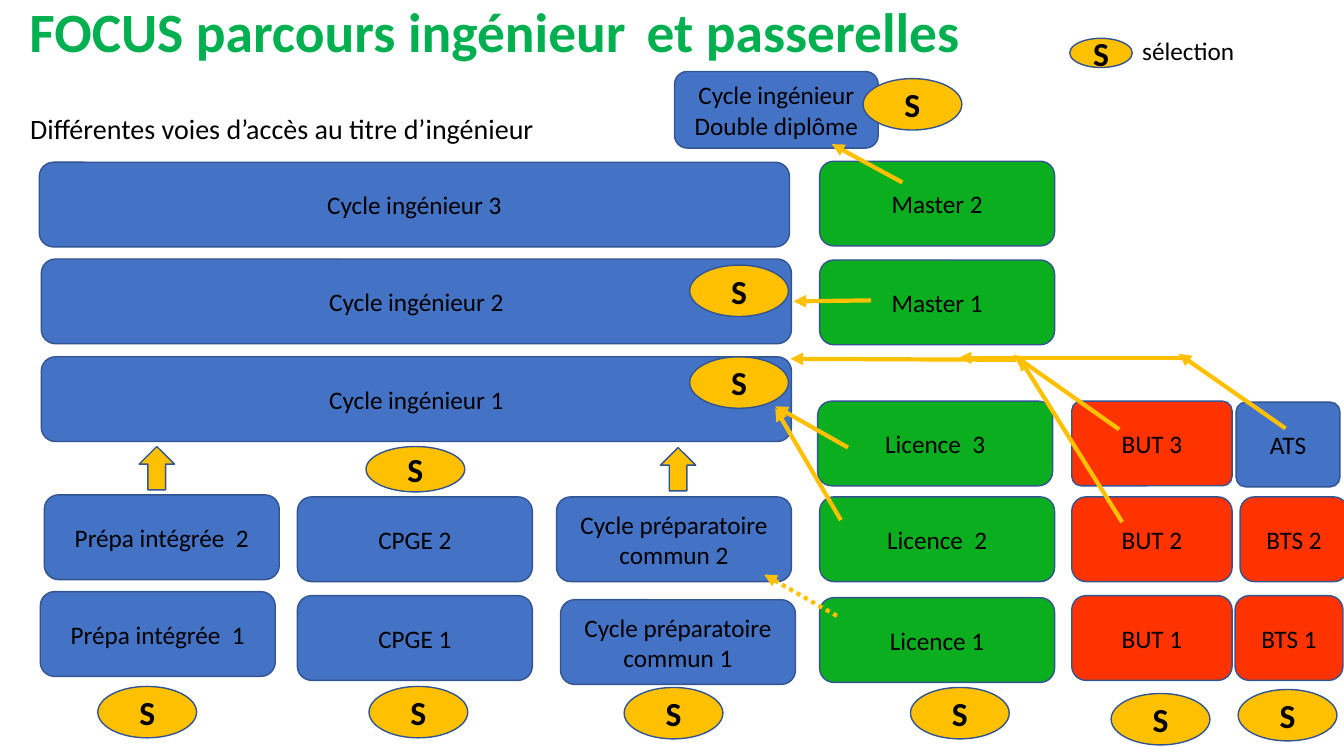
from lxml import etree
from pptx import Presentation
from pptx.dml.color import RGBColor
from pptx.enum.dml import MSO_LINE
from pptx.enum.shapes import MSO_CONNECTOR, MSO_SHAPE
from pptx.enum.text import MSO_ANCHOR as ANCHOR, PP_ALIGN as ALIGN
from pptx.oxml.ns import qn
from pptx.util import Inches, Pt

BLUE, GREEN, RED, GOLD = "4472C4", "0AAE1E", "FF3300", "FFC000"
OUTLINE, BLACK, TITLE_GREEN = "325491", "000000", "00B050"
BOX_H = 0.84

COLUMNS = [
    (2.33, BLUE, [("Prépa intégrée  1", 0.4, 5.87), ("Prépa intégrée  2", 0.44, 4.91)]),
    (2.33, BLUE, [("CPGE 1", 2.95, 5.91), ("CPGE 2", 2.95, 4.93)]),
    (2.33, BLUE, [("Cycle préparatoire commun 1", 5.56, 5.95),
                  ("Cycle préparatoire commun 2", 5.52, 4.93)]),
    (7.44, BLUE, [("Cycle ingénieur 1", 0.41, 3.54), ("Cycle ingénieur 2", 0.41, 2.57),
                  ("Cycle ingénieur 3", 0.39, 1.61)]),
    (2.33, GREEN, [("Licence 1", 8.13, 5.93), ("Licence  2", 8.13, 4.93),
                   ("Licence  3", 8.11, 3.98), ("Master 1", 8.13, 2.58),
                   ("Master 2", 8.13, 1.6)]),
    (1.59, RED, [("BUT 1", 10.63, 5.91), ("BUT 2", 10.63, 4.93)]),
    (1.07, RED, [("BTS 1", 12.25, 5.91), ("BTS 2", 12.3, 4.93)]),
]
SELECTIONS = [(0.97, 6.81), (3.66, 6.81), (6.19, 6.82), (9.03, 6.82), (11.02, 6.88),
              (12.28, 6.84), (6.84, 2.63), (6.84, 3.54), (8.56, 0.78)]
BRIDGES = [
    ((8.34, 5.16), (7.69, 4.05)),
    ((10.08, 3.57), (7.84, 3.56)),
    ((8.41, 4.44), (7.69, 4.03)),
    ((11.1, 4.26), (10.05, 3.52)),
    ((11.13, 5.18), (10.11, 3.55)),
    ((8.64, 2.98), (7.87, 2.99)),
    ((8.95, 1.81), (8.25, 1.43)),
    ((12.75, 4.25), (11.69, 3.51)),
    ((11.75, 3.55), (9.51, 3.55)),
]


def rgb(value):
    return RGBColor.from_string(value)


def write(sp, text, size, color=BLACK, bold=False, align=ALIGN.LEFT, anchor=ANCHOR.TOP):
    tf = sp.text_frame
    for name, value in {"word_wrap": True, "vertical_anchor": anchor}.items():
        setattr(tf, name, value)
    for i, line in enumerate(text.split("\n")):
        p = tf.add_paragraph() if i else tf.paragraphs[0]
        p.alignment = align
        r = p.add_run()
        r.text = line
        for name, value in {"name": "Calibri", "size": Pt(size), "bold": bold}.items():
            setattr(r.font, name, value)
        r.font.color.rgb = rgb(color)


def add_title(s, text):
    sp = s.shapes.title
    bounds = {"left": 0.19, "top": 0, "width": 11.5, "height": 0.87}
    for name, value in bounds.items():
        setattr(sp, name, Inches(value))
    write(sp, text, 39.6, TITLE_GREEN, True)
    sp.text_frame.paragraphs[0].line_spacing = 0.9


def add_label(s, text, x, y, w, h, size):
    write(s.shapes.add_textbox(Inches(x), Inches(y), Inches(w), Inches(h)), text, size)


def add_figure(s, kind, x, y, w, h, fill):
    sp = s.shapes.add_shape(kind, Inches(x), Inches(y), Inches(w), Inches(h))
    sp.shadow.inherit = False
    sp.fill.solid()
    sp.fill.fore_color.rgb = rgb(fill)
    sp.line.color.rgb = rgb(OUTLINE)
    sp.line.width = Pt(1)
    return sp


def add_box(s, text, x, y, w, fill, h=BOX_H, corner=0.1667):
    sp = add_figure(s, MSO_SHAPE.ROUNDED_RECTANGLE, x, y, w, h, fill)
    sp.adjustments[0] = corner
    write(sp, text, 18, align=ALIGN.CENTER, anchor=ANCHOR.MIDDLE)


def add_selection(s, x, y, w=0.98, h=0.51):
    sp = add_figure(s, MSO_SHAPE.OVAL, x, y, w, h, GOLD)
    write(sp, "S", 24, bold=True, align=ALIGN.CENTER, anchor=ANCHOR.MIDDLE)


def add_bridge(s, start, end, dash=None):
    cx = s.shapes.add_connector(MSO_CONNECTOR.STRAIGHT, *map(Inches, start + end))
    cx.line.color.rgb = rgb(GOLD)
    cx.line.width = Pt(3)
    if dash:
        cx.line.dash_style = dash
    ln = cx.line._get_or_add_ln()
    etree.SubElement(ln, qn("a:tailEnd"), type="triangle")
    etree.SubElement(cx._element.spPr, qn("a:effectLst"))


def main():
    prs = Presentation()
    prs.slide_width, prs.slide_height = Inches(13.33), Inches(7.5)
    s = prs.slides.add_slide(prs.slide_layouts[5])
    add_title(s, "FOCUS parcours ingénieur\t et passerelles")
    add_label(s, "Différentes voies d’accès au titre d’ingénieur", 0.2, 1.06, 13.15, 5.89, 20)

    for width, fill, boxes in COLUMNS:
        for text, x, y in boxes:
            add_box(s, text, x, y, width, fill)
    add_box(s, "BUT 3", 10.63, 3.98, 1.59, RED, corner=0.112)
    add_box(s, "ATS", 12.26, 3.99, 1.03, BLUE, corner=0.112)
    add_box(s, "Cycle ingénieur\nDouble diplôme", 6.69, 0.71, 2.02, BLUE, h=0.76)

    for x, y in SELECTIONS:
        add_selection(s, x, y)
    add_selection(s, 3.63, 4.43, h=0.45)
    for x, y in [(1.38, 4.43), (6.55, 4.44)]:
        add_figure(s, MSO_SHAPE.UP_ARROW, x, y, 0.35, 0.43, GOLD)

    for start, end in BRIDGES:
        add_bridge(s, start, end)
    add_bridge(s, (8.3, 6.11), (7.58, 5.7), MSO_LINE.ROUND_DOT)

    add_selection(s, 10.61, 0.38, 0.62, 0.29)
    add_label(s, "sélection", 11.23, 0.3, 1.55, 0.4, 18)
    prs.save("out.pptx")


if __name__ == "__main__":
    main()
